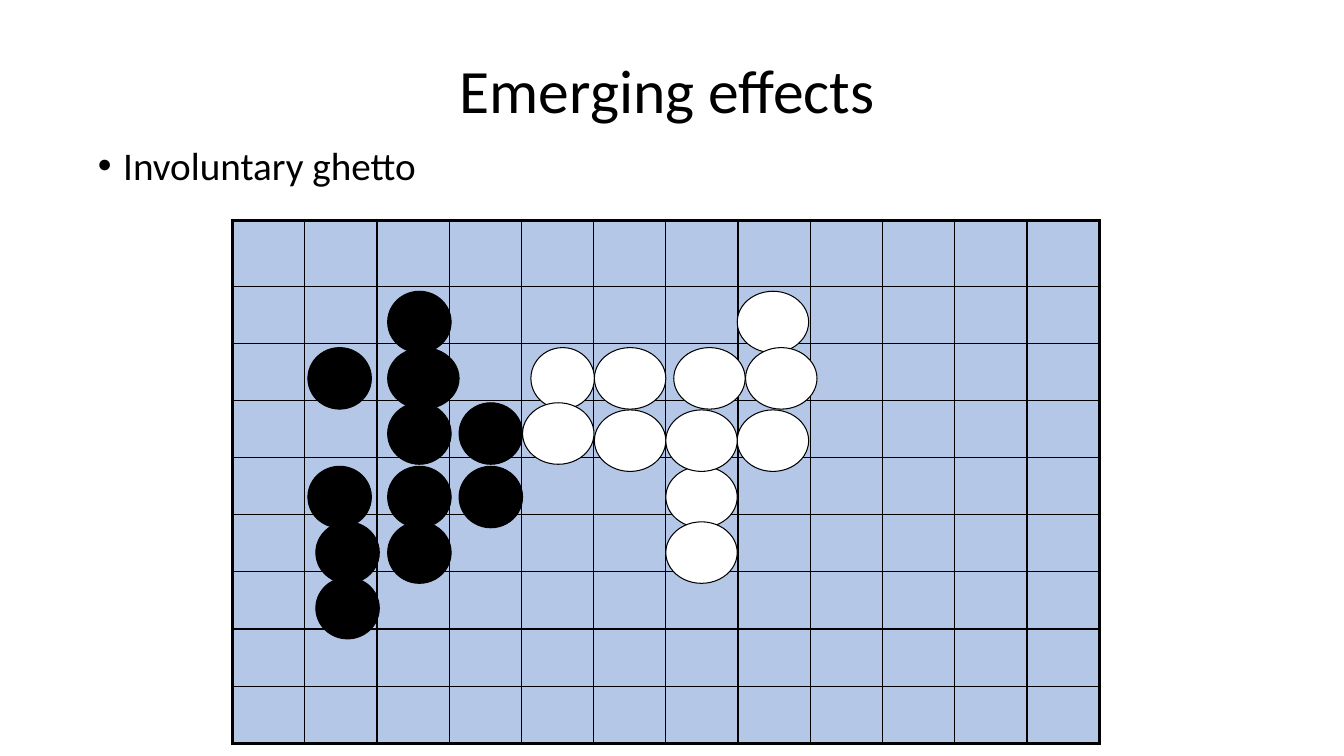
import lxml.etree
import pptx
import pptx.dml.color
import pptx.enum.shapes
import pptx.enum.text
import pptx.oxml.ns
import pptx.util

Cm = pptx.util.Cm
Pt = pptx.util.Pt
qn = pptx.oxml.ns.qn

BLACK = pptx.dml.color.RGBColor(0x00, 0x00, 0x00)
WHITE = pptx.dml.color.RGBColor(0xFF, 0xFF, 0xFF)
BOARD_BLUE = pptx.dml.color.RGBColor(0xB4, 0xC7, 0xE7)
FONT = "Calibri"

# Board grid, in cm
COLUMNS, ROWS = 12, 9
COLUMN_WIDTH, FIRST_ROW, ROW_HEIGHT = 1.82, 1.65, 1.44
THIN, THICK = Pt(1), Pt(2.25)

# Counters from back to front: left and top from the board corner, width, colour
NARROW, WIDE, COUNTER_HEIGHT = 1.6, 1.8, 1.55
COUNTERS = [
    (3.91, 1.78, NARROW, BLACK), (12.72, 1.78, WIDE, WHITE),
    (3.91, 4.59, NARROW, BLACK), (3.91, 6.19, NARROW, BLACK),
    (2.10, 7.59, NARROW, BLACK), (7.52, 3.20, NARROW, WHITE),
    (5.71, 6.19, NARROW, BLACK), (3.91, 7.59, NARROW, BLACK),
    (1.90, 3.20, NARROW, BLACK), (1.90, 6.19, NARROW, BLACK),
    (2.10, 8.99, NARROW, BLACK), (5.71, 4.59, NARROW, BLACK),
    (9.12, 3.20, WIDE, WHITE), (3.91, 3.20, WIDE, BLACK),
    (7.31, 4.59, WIDE, WHITE), (12.93, 3.20, WIDE, WHITE),
    (10.92, 6.19, WIDE, WHITE), (10.92, 7.59, WIDE, WHITE),
    (12.72, 4.77, WIDE, WHITE), (9.12, 4.77, WIDE, WHITE),
    (10.92, 4.77, WIDE, WHITE), (11.12, 3.20, WIDE, WHITE),
]


def fill_placeholder(holder, box, text, size):
    """Place a template placeholder in its box and give it one paragraph."""
    holder.left, holder.top, holder.width, holder.height = map(Cm, box)
    para = holder.text_frame.paragraphs[0]
    para.line_spacing = 0.9
    span = para.add_run()
    span.text = text
    span.font.size = Pt(size)
    span.font.name = FONT
    span.font.color.rgb = BLACK
    return para


def add_title(page, box, text):
    para = fill_placeholder(page.shapes.title, box, text, 44)
    para.alignment = pptx.enum.text.PP_ALIGN.CENTER
    page.shapes.title.text_frame.vertical_anchor = pptx.enum.text.MSO_ANCHOR.MIDDLE


def add_bullet(page, box, text):
    para = fill_placeholder(page.placeholders[1], box, text, 28)
    para.space_before = Pt(10)
    properties = para._p.get_or_add_pPr()
    properties.set("marL", str(Cm(0.64)))
    properties.set("indent", str(-Cm(0.64)))
    lxml.etree.SubElement(properties, qn("a:buChar")).set("char", "•")


def draw_borders(cell, widths):
    """Set the left, right, top and bottom borders, ahead of the cell fill."""
    properties = cell._tc.get_or_add_tcPr()
    for position, (side, width) in enumerate(zip("LRTB", widths)):
        line = lxml.etree.Element(qn("a:ln" + side), w=str(width))
        solid = lxml.etree.SubElement(line, qn("a:solidFill"))
        lxml.etree.SubElement(solid, qn("a:srgbClr")).set("val", str(BLACK))
        properties.insert(position, line)


def add_board(page, box):
    """Draw the grid with a thick outer frame."""
    grid = page.shapes.add_table(ROWS, COLUMNS, *map(Cm, box)).table
    grid.first_row = grid.horz_banding = False
    for column in grid.columns:
        column.width = Cm(COLUMN_WIDTH)
    for number, row in enumerate(grid.rows):
        row.height = Cm(ROW_HEIGHT if number else FIRST_ROW)
        for place, cell in enumerate(row.cells):
            cell.fill.solid()
            cell.fill.fore_color.rgb = BOARD_BLUE
            outer = (place == 0, place == COLUMNS - 1, number == 0, number == ROWS - 1)
            draw_borders(cell, [THICK if edge else THIN for edge in outer])


def add_counters(page, box):
    """Put the black and white counters on the board."""
    for left, top, width, colour in COUNTERS:
        counter = page.shapes.add_shape(
            pptx.enum.shapes.MSO_SHAPE.OVAL,
            Cm(box[0] + left), Cm(box[1] + top), Cm(width), Cm(COUNTER_HEIGHT))
        counter.shadow.inherit = False
        counter.fill.solid()
        counter.fill.fore_color.rgb = colour
        counter.line.color.rgb = BLACK
        counter.line.width = Pt(0.75)


def main():
    deck = pptx.Presentation()
    deck.slide_width, deck.slide_height = Cm(33.87), Cm(19.05)
    page = deck.slides.add_slide(deck.slide_layouts[1])

    # Heading and bullet
    add_title(page, (1.96, 0.81, 29.72, 3.07), "Emerging effects")
    add_bullet(page, (2.21, 3.56, 14.83, 1.75), "Involuntary ghetto")

    # Board with its counters
    board = (5.86, 5.56, COLUMNS * COLUMN_WIDTH, FIRST_ROW + (ROWS - 1) * ROW_HEIGHT)
    add_board(page, board)
    add_counters(page, board)

    deck.save("out.pptx")


if __name__ == "__main__":
    main()
